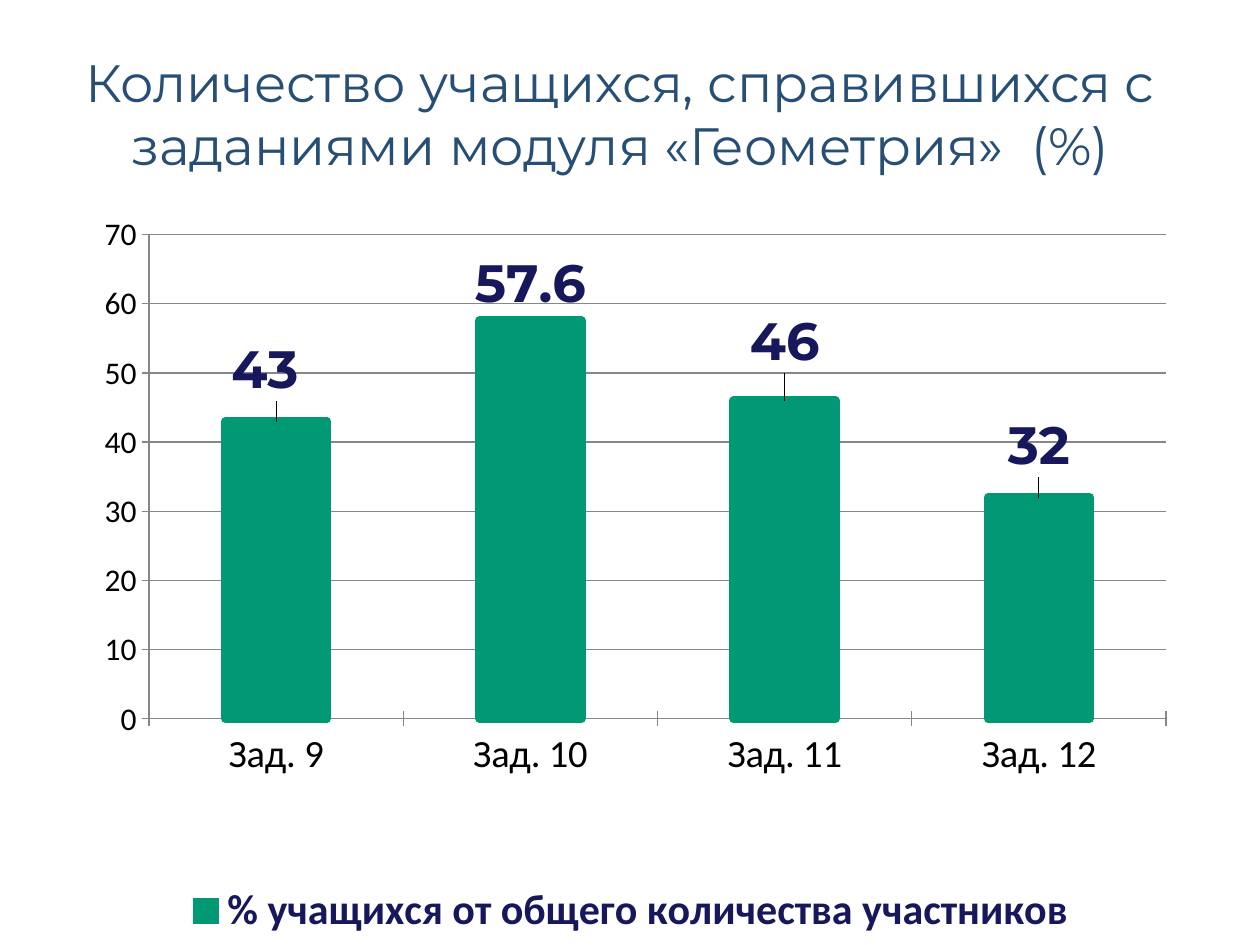
import pptx
import pptx.util
import pptx.chart.data
import pptx.dml.color
import pptx.enum.chart
import pptx.enum.text
import lxml.etree

Pt = pptx.util.Pt
enum = pptx.enum.chart
theme = {
    "title": "274E75", "bar": "009973", "label": "17175C",
    "text": "000000", "grid": "878787",
    "head": 30, "value": 30, "key": 24, "cat": 22, "base": 18,
    "sans": "Calibri", "show": "Montserrat",
}


def style(font, size, color, face, bold=False):
    font.size = Pt(theme[size])
    font.color.rgb = pptx.dml.color.RGBColor.from_string(theme[color])
    font.name = theme[face]
    font.bold = bold


def place(node, index, **parts):
    space = node.nsmap["c"]
    for old in node.findall(f"{{{space}}}layout"):
        node.remove(old)
    layout = lxml.etree.Element(f"{{{space}}}layout")
    manual = lxml.etree.SubElement(layout, f"{{{space}}}manualLayout")
    for tag, value in parts.items():
        lxml.etree.SubElement(manual, f"{{{space}}}{tag}").set("val", str(value))
    node.insert(index, layout)


deck = pptx.Presentation()
deck.slide_width, deck.slide_height = Pt(720), Pt(540)
slide = deck.slides.add_slide(deck.slide_layouts[5])

title = slide.shapes.title
title.left, title.top, title.width, title.height = Pt(0), Pt(11.5), Pt(708.5), Pt(106.5)
frame = title.text_frame
frame.text = "Количество учащихся, справившихся с заданиями модуля «Геометрия»  (%)"
frame.word_wrap = True
frame.vertical_anchor = pptx.enum.text.MSO_ANCHOR.MIDDLE
frame.paragraphs[0].alignment = pptx.enum.text.PP_ALIGN.CENTER
style(frame.paragraphs[0].runs[0].font, "head", "title", "show")

data = pptx.chart.data.CategoryChartData()
data.categories = [f"Зад. {task}" for task in range(9, 13)]
data.add_series("% учащихся от общего количества участников", [43, 57.6, 46, 32])
chart = slide.shapes.add_chart(
    enum.XL_CHART_TYPE.COLUMN_CLUSTERED,
    Pt(39.6), Pt(112.3), Pt(641.5), Pt(427.7), data).chart
chart.has_title = False
style(chart.font, "base", "text", "sans")
chart.has_legend = True
chart.legend.position = enum.XL_LEGEND_POSITION.BOTTOM
chart.legend.include_in_layout = False
style(chart.legend.font, "key", "label", "sans", True)

plot = chart.plots[0]
plot.gap_width = 150
plot.vary_by_categories = False
area = chart.element.chart.plotArea
place(area, 0, layoutTarget="inner", xMode="edge", yMode="edge",
      x=0.071, y=0.051, w=0.906, h=0.647)

scale = chart.value_axis
scale.minimum_scale, scale.maximum_scale, scale.major_unit = 0, 70, 10
scale.has_major_gridlines = True
style(scale.tick_labels.font, "base", "text", "sans")
style(chart.category_axis.tick_labels.font, "cat", "text", "sans")
for axis in (scale, chart.category_axis):
    axis.major_tick_mark = enum.XL_TICK_MARK.CROSS
    axis.minor_tick_mark = enum.XL_TICK_MARK.NONE
for line in (scale.format.line, chart.category_axis.format.line,
             scale.major_gridlines.format.line):
    line.color.rgb = pptx.dml.color.RGBColor.from_string(theme["grid"])
    line.width = Pt(0.75)

bars = plot.series[0]
green = pptx.dml.color.RGBColor.from_string(theme["bar"])
bars.format.fill.solid()
bars.format.fill.fore_color.rgb = green
bars.format.line.color.rgb = green
bars.format.line.width = Pt(5)
bars.data_labels.show_value = True
bars.data_labels.position = enum.XL_LABEL_POSITION.OUTSIDE_END
style(bars.data_labels.font, "value", "label", "show", True)

shifts = [(-0.01, -0.02), (0, 0), (0, -0.03), (0, -0.02)]
for index, (across, down) in enumerate(shifts):
    label = bars.points[index].data_label
    style(label.font, "value", "label", "show", True)
    label.position = enum.XL_LABEL_POSITION.OUTSIDE_END
    if across or down:
        node = bars.data_labels._element.dLbl_lst[index]
        place(node, 1, x=across, y=down)

deck.save("out.pptx")
